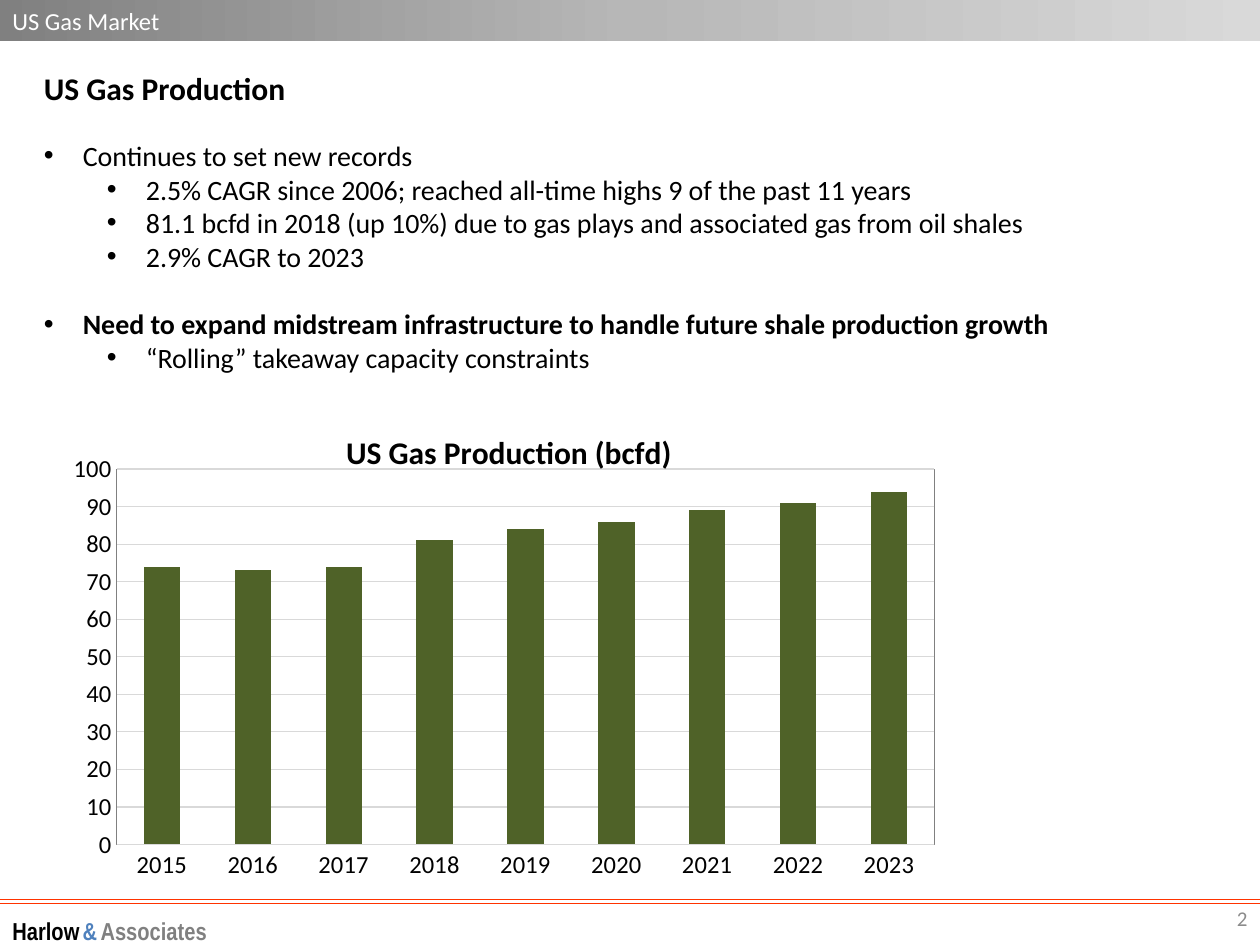
from copy import deepcopy

from lxml import etree
from pptx import Presentation
from pptx.chart.data import CategoryChartData
from pptx.dml.color import RGBColor
from pptx.enum.chart import XL_CHART_TYPE, XL_TICK_MARK
from pptx.enum.shapes import MSO_CONNECTOR, MSO_SHAPE
from pptx.enum.text import MSO_ANCHOR, PP_ALIGN
from pptx.oxml import parse_xml
from pptx.oxml.ns import nsdecls, qn
from pptx.util import Inches, Pt

BULLETS = [
    (0, "Continues to set new records", False, 18),
    (1, "2.5% CAGR since 2006; reached all-time highs 9 of the past 11 years", False, 0),
    (1, "81.1 bcfd in 2018 (up 10%) due to gas plays and associated gas from oil shales", False, 0),
    (1, "2.9% CAGR to 2023", False, 0),
    (0, "Need to expand midstream infrastructure to handle future shale production growth", True, 19.5),
    (1, "“Rolling” takeaway capacity constraints", False, 0),
]
PRODUCTION = [74, 73, 74, 81, 84, 86, 89, 91, 94]


def color(hex_code):
    """Turn a hex string into a colour."""
    return RGBColor.from_string(hex_code)


def style_font(font, size, hex_code="000000", bold=False, name="Calibri"):
    """Set the look of a font."""
    font.name, font.size, font.bold = name, Pt(size), bold
    font.color.rgb = color(hex_code)


def add_run(p, text, size, hex_code="000000", bold=False, name="Calibri"):
    """Add one styled run to a paragraph."""
    r = p.add_run()
    r.text = text
    style_font(r.font, size, hex_code, bold, name)


def add_text_box(s, x, y, w, h, anchor=MSO_ANCHOR.MIDDLE):
    """Add a wrapping text box and return its text frame."""
    tf = s.shapes.add_textbox(Inches(x), Inches(y), Inches(w), Inches(h)).text_frame
    tf.word_wrap = True
    tf.vertical_anchor = anchor
    return tf


def add_header(s, x, y, w, h):
    """Add the gradient band with the section name."""
    sp = s.shapes.add_shape(MSO_SHAPE.RECTANGLE, Inches(x), Inches(y), Inches(w), Inches(h))
    sp.shadow.inherit = False
    sp.line.fill.background()
    sp.fill.gradient()
    sp.fill.gradient_angle = 0
    stops = sp.fill.gradient_stops
    first = sp._element.spPr.find(".//" + qn("a:gs"))
    first.addnext(deepcopy(first))
    stops = sp.fill.gradient_stops
    for stop, position, hex_code in zip(stops, (0, 0.5, 1), ("808080", "B7B7B7", "D9D9D9")):
        stop.position = position
        stop.color.rgb = color(hex_code)
    tf = sp.text_frame
    tf.vertical_anchor = MSO_ANCHOR.MIDDLE
    p = tf.paragraphs[0]
    p.alignment = PP_ALIGN.LEFT
    add_run(p, "US Gas Market", 14, "FFFFFF")


def add_bullets(s, x, y, w, h):
    """Add the heading and the two-level bullet list."""
    tf = add_text_box(s, x, y, w, h, MSO_ANCHOR.TOP)
    add_run(tf.paragraphs[0], "US Gas Production", 18, bold=True)
    for level, text, bold, gap in BULLETS:
        p = tf.add_paragraph()
        p.level = level
        p.space_before = Pt(gap)
        pPr = p._p.get_or_add_pPr()
        pPr.set("marL", str(Inches(0.31 + 0.5 * level)))
        pPr.set("indent", str(Inches(-0.31)))
        etree.SubElement(pPr, qn("a:buFont")).set("typeface", "Arial")
        etree.SubElement(pPr, qn("a:buChar")).set("char", "•")
        add_run(p, text, 16, bold=bold)


def set_plot_layout(chart, x, y, w, h):
    """Fix the inner plot area as fractions of the chart and frame it."""
    plot_area = chart._chartSpace.chart.plotArea
    for old in plot_area.findall(qn("c:layout")):
        plot_area.remove(old)
    values = zip("xywh", (x, y, w, h))
    sizes = "".join(f'<c:{k} val="{v}"/>' for k, v in values)
    plot_area.insert(0, parse_xml(
        f'<c:layout {nsdecls("c")}><c:manualLayout><c:layoutTarget val="inner"/>'
        f'<c:xMode val="edge"/><c:yMode val="edge"/>{sizes}</c:manualLayout></c:layout>'))
    plot_area.append(parse_xml(
        f'<c:spPr {nsdecls("c", "a")}><a:noFill/><a:ln w="9525"><a:solidFill>'
        '<a:srgbClr val="808080"/></a:solidFill></a:ln></c:spPr>'))


def add_production_chart(s, x, y, w, h):
    """Add the column chart of yearly gas production."""
    data = CategoryChartData()
    data.categories = [str(year) for year in range(2015, 2024)]
    data.add_series("Series 1", PRODUCTION)
    chart = s.shapes.add_chart(XL_CHART_TYPE.COLUMN_STACKED, Inches(x), Inches(y),
                               Inches(w), Inches(h), data).chart
    style_font(chart.font, 10, bold=True)
    chart.has_legend = False
    chart.has_title = True
    add_run(chart.chart_title.text_frame.paragraphs[0], "US Gas Production (bcfd)", 18, bold=True)
    chart.chart_title.include_in_layout = False

    plot = chart.plots[0]
    plot.vary_by_categories = False
    plot.gap_width, plot.overlap = 150, 100
    fill = plot.series[0].format.fill
    fill.solid()
    fill.fore_color.rgb = color("4F6228")

    cat_axis, val_axis = chart.category_axis, chart.value_axis
    for axis in (cat_axis, val_axis):
        axis.major_tick_mark = axis.minor_tick_mark = XL_TICK_MARK.NONE
        style_font(axis.tick_labels.font, 14)
    val_axis.minimum_scale, val_axis.maximum_scale, val_axis.major_unit = 0, 100, 10
    val_axis.tick_labels.number_format = "#,##0"
    val_axis.tick_labels.number_format_is_linked = False
    val_axis.has_major_gridlines = True
    val_axis.format.line.fill.background()
    for line in (cat_axis.format.line, val_axis.major_gridlines.format.line):
        line.color.rgb = color("D9D9D9")
        line.width = Pt(0.75)
    set_plot_layout(chart, 0.06, 0.124, 0.917, 0.764)


def add_footer(s, x, y, w):
    """Add the double rule, the firm name and the page number."""
    for offset in (0, 0.03):
        line = s.shapes.add_connector(MSO_CONNECTOR.STRAIGHT, Inches(x), Inches(y + offset),
                                      Inches(x + w), Inches(y + offset))
        line.line.color.rgb = color("FF3300")
        line.line.width = Pt(0.75)
        etree.SubElement(line._element.spPr, qn("a:effectLst"))
    p = add_text_box(s, x, y + 0.11, 4.33, 0.27).paragraphs[0]
    for text, size, hex_code, bold in (("Harlow", 14, "000000", True), (" ", 8, "000000", False),
                                       ("&", 14, "4F81BD", True), (" ", 8, "000000", False),
                                       ("Associates", 14, "808080", True)):
        add_run(p, text, size, hex_code, bold, "Arial Narrow")
    p = add_text_box(s, x + w - 2.33, y - 0.05, 2.33, 0.4).paragraphs[0]
    p.alignment = PP_ALIGN.RIGHT
    add_run(p, "2", 12, "8C8C8C")


def main():
    """Build the slide and save it."""
    prs = Presentation()
    prs.slide_width, prs.slide_height = Inches(10), Inches(7.5)
    s = prs.slides.add_slide(prs.slide_layouts[6])
    add_bullets(s, 0.25, 0.5, 9.5, 2.54)
    add_header(s, 0, 0, 10, 0.33)
    add_footer(s, 0, 7.14, 10)
    add_production_chart(s, 0.5, 3.24, 7.08, 3.9)
    prs.save("out.pptx")


if __name__ == "__main__":
    main()
